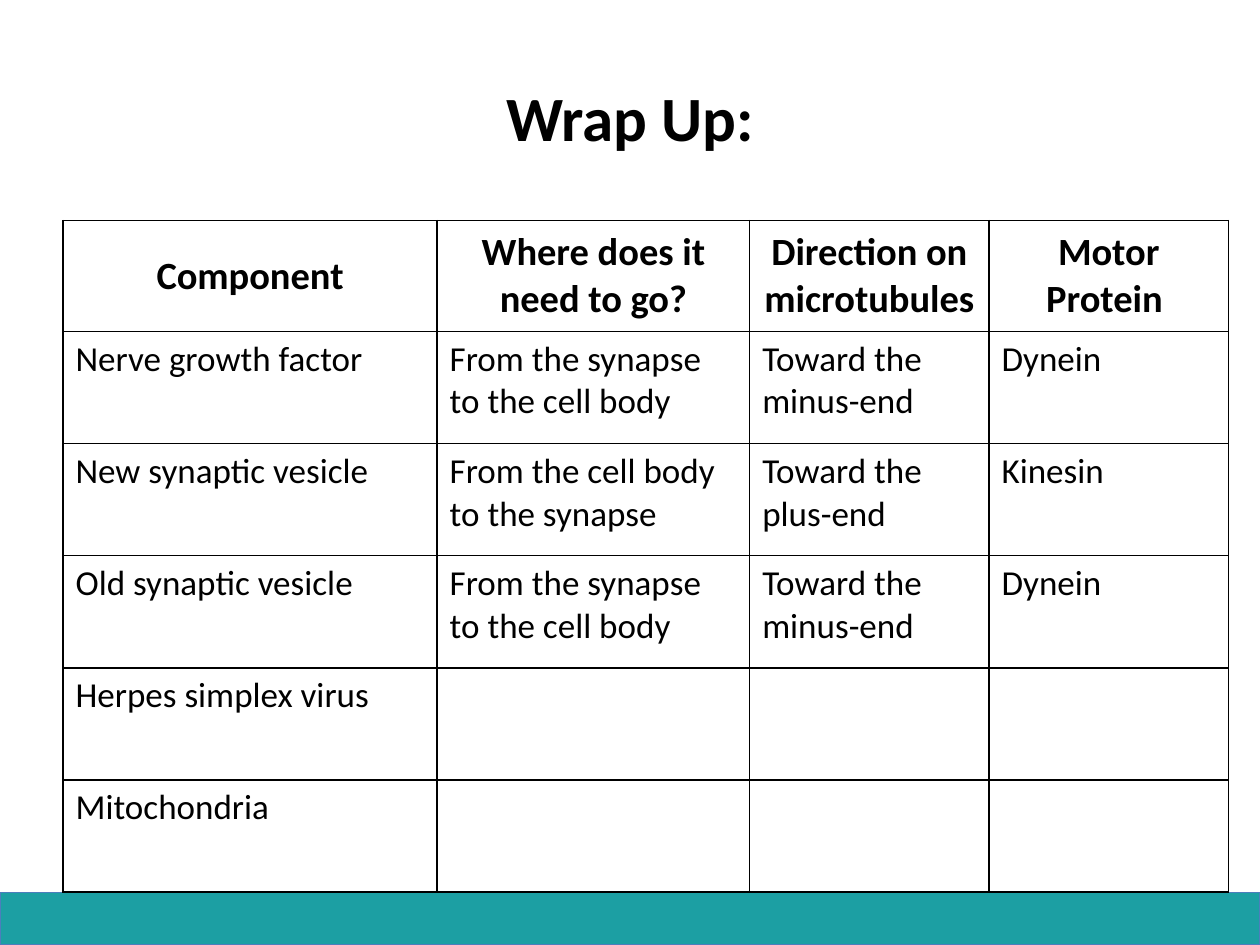
from lxml.etree import SubElement
from pptx import Presentation
from pptx.dml.color import RGBColor
from pptx.enum.shapes import MSO_SHAPE
from pptx.enum.text import MSO_ANCHOR, PP_ALIGN
from pptx.oxml.ns import qn
from pptx.util import Pt

BLACK, TEAL, BLUE = "000000", "1C9FA3", "4B7EBC"
SLIDE_WIDTH, SLIDE_HEIGHT = 720, 540

COLUMN_WIDTHS = [213.8, 178.6, 136.8, 136.8]
HEADER_HEIGHT, ROW_HEIGHT = 63.4, 64.1
HEADINGS = ["Component", "Where does it need to go?",
            "Direction on microtubules", "Motor Protein "]
TO_CELL_BODY = ["From the synapse to the cell body", "Toward the minus-end", "Dynein"]
TO_SYNAPSE = ["From the cell body to the synapse", "Toward the plus-end", "Kinesin"]
UNANSWERED = ["", "", ""]
COMPONENTS = {
    "Nerve growth factor": TO_CELL_BODY,
    "New synaptic vesicle": TO_SYNAPSE,
    "Old synaptic vesicle": TO_CELL_BODY,
    "Herpes simplex virus": UNANSWERED,
    "Mitochondria": UNANSWERED,
}

TITLE_FONT = {"name": "Calibri", "size": Pt(36), "bold": True}
HEADING_FONT = {"name": "Calibri", "size": Pt(22), "bold": True}
BODY_FONT = {"name": "Calibri", "size": Pt(20), "bold": False}


def color(hex_value):
    return RGBColor.from_string(hex_value)


def write(frame, text, font_format, align):
    paragraph = frame.paragraphs[0]
    paragraph.alignment = align
    if not text:
        return
    run = paragraph.add_run()
    run.text = text
    for attribute, value in font_format.items():
        setattr(run.font, attribute, value)
    run.font.color.rgb = color(BLACK)


def add_borders(cell, hex_value, width):
    properties = cell._tc.get_or_add_tcPr()
    for side in ("lnL", "lnR", "lnT", "lnB"):
        border = SubElement(properties, qn(f"a:{side}"), w=str(Pt(width)))
        fill = SubElement(border, qn("a:solidFill"))
        SubElement(fill, qn("a:srgbClr"), val=hex_value)


def add_band(slide, left, top, width, height):
    band = slide.shapes.add_shape(
        MSO_SHAPE.RECTANGLE, Pt(left), Pt(top), Pt(width), Pt(height))
    band.shadow.inherit = False
    band.fill.solid()
    band.fill.fore_color.rgb = color(TEAL)
    band.line.color.rgb = color(BLUE)
    band.line.width = Pt(0.75)


def place_title(slide, left, top, width, height):
    title = slide.shapes.title
    box = {"left": left, "top": top, "width": width, "height": height}
    for attribute, value in box.items():
        setattr(title, attribute, Pt(value))
    title.text_frame.vertical_anchor = MSO_ANCHOR.MIDDLE
    write(title.text_frame, "Wrap Up:", TITLE_FONT, PP_ALIGN.CENTER)


def add_transport_table(slide, left, top, width, height):
    rows = [HEADINGS] + [[name, *answers] for name, answers in COMPONENTS.items()]
    table = slide.shapes.add_table(
        len(rows), len(HEADINGS), Pt(left), Pt(top), Pt(width), Pt(height)).table
    table.first_row = table.horz_banding = False
    for column, column_width in zip(table.columns, COLUMN_WIDTHS):
        column.width = Pt(column_width)
    for row_index, texts in enumerate(rows):
        is_header = row_index == 0
        table.rows[row_index].height = Pt(HEADER_HEIGHT if is_header else ROW_HEIGHT)
        for column_index, text in enumerate(texts):
            cell = table.cell(row_index, column_index)
            add_borders(cell, BLACK, 1)
            cell.fill.background()
            cell.vertical_anchor = MSO_ANCHOR.MIDDLE if is_header else MSO_ANCHOR.TOP
            write(cell.text_frame, text,
                  HEADING_FONT if is_header else BODY_FONT,
                  PP_ALIGN.CENTER if is_header else PP_ALIGN.LEFT)


def main():
    presentation = Presentation()
    presentation.slide_width = Pt(SLIDE_WIDTH)
    presentation.slide_height = Pt(SLIDE_HEIGHT)
    slide = presentation.slides.add_slide(
        presentation.slide_layouts.get_by_name("Title Only"))
    add_band(slide, 0, 510, SLIDE_WIDTH, 30)
    place_title(slide, 36, 21.6, 648, 90)
    add_transport_table(slide, 36, 126, sum(COLUMN_WIDTHS),
                        HEADER_HEIGHT + ROW_HEIGHT * len(COMPONENTS))
    presentation.save("out.pptx")


if __name__ == "__main__":
    main()
